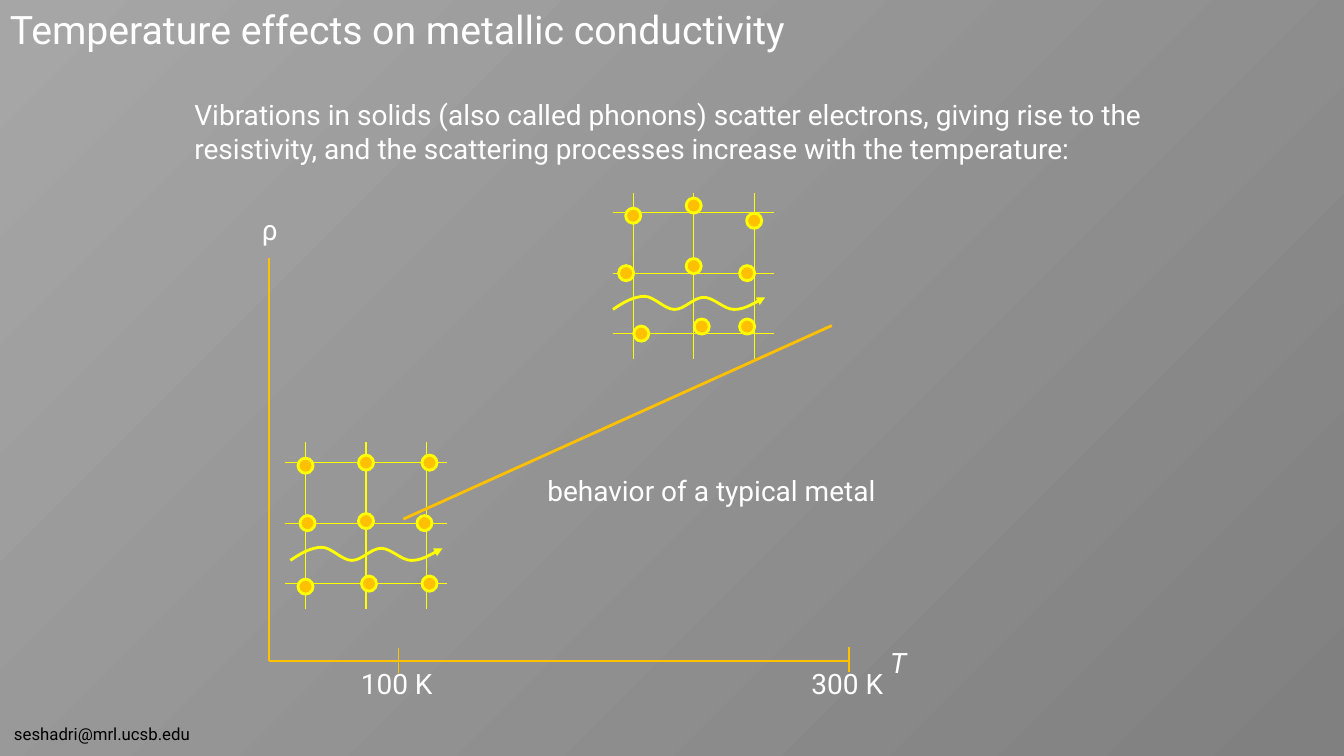
from dataclasses import dataclass

from lxml import etree
from pptx import Presentation
from pptx.dml.color import RGBColor
from pptx.enum.shapes import MSO_CONNECTOR, MSO_SHAPE
from pptx.enum.text import MSO_AUTO_SIZE
from pptx.oxml.ns import qn
from pptx.slide import Slide
from pptx.util import Inches, Pt

STRAIGHT = MSO_CONNECTOR.STRAIGHT
ELLIPSE = MSO_SHAPE.OVAL
GROW = MSO_AUTO_SIZE.SHAPE_TO_FIT_TEXT

WHITE = RGBColor(0xFF, 0xFF, 0xFF)
BLACK = RGBColor(0x00, 0x00, 0x00)
YELLOW = RGBColor(0xFF, 0xFF, 0x00)
AMBER = RGBColor(0xFF, 0xC0, 0x00)
LIGHT_GRAY = RGBColor(0xA6, 0xA6, 0xA6)
DARK_GRAY = RGBColor(0x80, 0x80, 0x80)

FONT = "Roboto"
SPACING = 0.6
OVERHANG = 0.2
GRID_WIDTH, GRID_HEIGHT = 1.6, 1.65
ION_SIZE = 0.15

WAVE_START = (0, 0.13)
WAVE_CURVES = (
    ((0.1, 0.06), (0.21, 0), (0.31, 0)),
    ((0.41, 0), (0.51, 0.13), (0.61, 0.13)),
    ((0.71, 0.13), (0.8, 0.01), (0.9, 0.01)),
    ((1, 0.01), (1.1, 0.13), (1.2, 0.13)),
    ((1.3, 0.13), (1.51, 0.01), (1.51, 0.01)),
)

Point = tuple[float, float]


@dataclass(frozen=True)
class Label:
    text: str
    left: float
    top: float
    width: float
    height: float = 0.44
    size: int = 20
    color: RGBColor = WHITE
    italic: bool = False
    wrap: bool = False


@dataclass(frozen=True)
class Line:
    start: Point
    end: Point
    color: RGBColor
    weight: float


@dataclass(frozen=True)
class Lattice:
    left: float
    top: float
    wave: Point
    displacements: tuple[tuple[Point, ...], ...]


LABELS = (
    Label("seshadri@mrl.ucsb.edu", 0.04, 7.13, 1.95, 0.3, size=12, color=BLACK),
    Label("Temperature effects on metallic conductivity", 0, 0, 13.33, 0.57, size=28, wrap=True),
    Label(
        "Vibrations in solids (also called phonons) scatter electrons, giving rise to the "
        "resistivity, and the scattering processes increase with the temperature:",
        1.83, 0.92, 9.67, 0.77, wrap=True,
    ),
    Label("300 K", 7.95, 6.56, 0.94),
    Label("100 K", 3.48, 6.56, 0.94),
    Label("T", 8.73, 6.35, 0.36, italic=True),
    Label("ρ", 2.5, 2.06, 0.36),
    Label("behavior of a typical metal", 5.33, 4.65, 3.56),
)

PLOT_LINES = (
    Line((2.67, 2.56), (2.67, 6.56), AMBER, 1.5),
    Line((2.67, 6.56), (8.42, 6.56), AMBER, 1.5),
    Line((8.25, 3.23), (4, 5.15), AMBER, 2),
    Line((8.42, 6.42), (8.42, 6.67), AMBER, 1),
    Line((3.95, 6.43), (3.95, 6.68), AMBER, 1),
)

LATTICES = (
    Lattice(2.83, 4.39, (2.88, 5.43), (
        ((0, 0.03), (0.02, 0), (0, 0.03)),
        ((0, 0), (0, -0.02), (0.03, 0)),
        ((0.03, 0), (-0.02, 0), (0.03, 0)),
    )),
    Lattice(6.08, 1.91, (6.08, 2.94), (
        ((0, 0.03), (-0.07, 0), (0.08, 0)),
        ((0, -0.07), (0, -0.07), (0.08, -0.07)),
        ((0, 0.08), (-0.07, 0), (-0.07, -0.07)),
    )),
)


def paint_background(page: Slide) -> None:
    fill = page.background.fill
    fill.gradient()
    fill.gradient_angle = 315
    stops = ((0.01, LIGHT_GRAY), (0.99, DARK_GRAY))
    for stop, (position, color) in zip(fill.gradient_stops, stops):
        stop.position = position
        stop.color.rgb = color


def add_label(page: Slide, label: Label) -> None:
    box = page.shapes.add_textbox(
        *map(Inches, (label.left, label.top, label.width, label.height))
    )
    frame = box.text_frame
    frame.word_wrap = label.wrap
    frame.auto_size = GROW
    span = frame.paragraphs[0].add_run()
    span.text = label.text
    font_format = {"name": FONT, "size": Pt(label.size), "italic": label.italic}
    for name, value in font_format.items():
        setattr(span.font, name, value)
    span.font.color.rgb = label.color


def add_line(page: Slide, line: Line) -> None:
    connector = page.shapes.add_connector(STRAIGHT, *map(Inches, line.start + line.end))
    connector.line.color.rgb = line.color
    connector.line.width = Pt(line.weight)
    etree.SubElement(connector._element.spPr, qn("a:effectLst"))


def add_ion(page: Slide, center_x: float, center_y: float) -> None:
    ion = page.shapes.add_shape(
        ELLIPSE,
        Inches(center_x - ION_SIZE / 2),
        Inches(center_y - ION_SIZE / 2),
        Inches(ION_SIZE),
        Inches(ION_SIZE),
    )
    ion.shadow.inherit = False
    ion.fill.solid()
    ion.fill.fore_color.rgb = AMBER
    ion.line.color.rgb = YELLOW
    ion.line.width = Pt(2)


def add_wave(page: Slide, origin: Point) -> None:
    builder = page.shapes.build_freeform(*map(Inches, WAVE_START))
    builder.add_line_segments(
        [tuple(map(Inches, curve[-1])) for curve in WAVE_CURVES], close=False
    )
    wave = builder.convert_to_shape(*map(Inches, origin))
    wave.shadow.inherit = False
    wave.fill.background()
    wave.line.color.rgb = YELLOW
    wave.line.width = Pt(2)
    properties = wave._element.spPr
    for segment, curve in zip(list(properties.iter(qn("a:lnTo"))), WAVE_CURVES):
        bezier = etree.Element(qn("a:cubicBezTo"))
        for x, y in curve:
            etree.SubElement(bezier, qn("a:pt"), x=str(Inches(x)), y=str(Inches(y)))
        segment.getparent().replace(segment, bezier)
    etree.SubElement(properties.find(qn("a:ln")), qn("a:tailEnd"), type="triangle")


def add_lattice(page: Slide, lattice: Lattice) -> None:
    left, top = lattice.left, lattice.top
    columns = [left + OVERHANG + SPACING * index for index in range(3)]
    rows = [top + OVERHANG + SPACING * index for index in range(3)]
    for x in columns:
        add_line(page, Line((x, top), (x, top + GRID_HEIGHT), YELLOW, 0.75))
    for y in rows:
        add_line(page, Line((left, y), (left + GRID_WIDTH, y), YELLOW, 0.75))
    for x, shifts in zip(columns, lattice.displacements):
        for y, (shift_x, shift_y) in zip(rows, shifts):
            add_ion(page, x + shift_x, y + shift_y)
    add_wave(page, lattice.wave)


def main() -> None:
    deck = Presentation()
    deck.slide_width = Inches(13.33)
    deck.slide_height = Inches(7.5)
    page = deck.slides.add_slide(deck.slide_layouts[6])
    paint_background(page)
    for lattice in LATTICES:
        add_lattice(page, lattice)
    for line in PLOT_LINES:
        add_line(page, line)
    for label in LABELS:
        add_label(page, label)
    deck.save("out.pptx")


if __name__ == "__main__":
    main()
